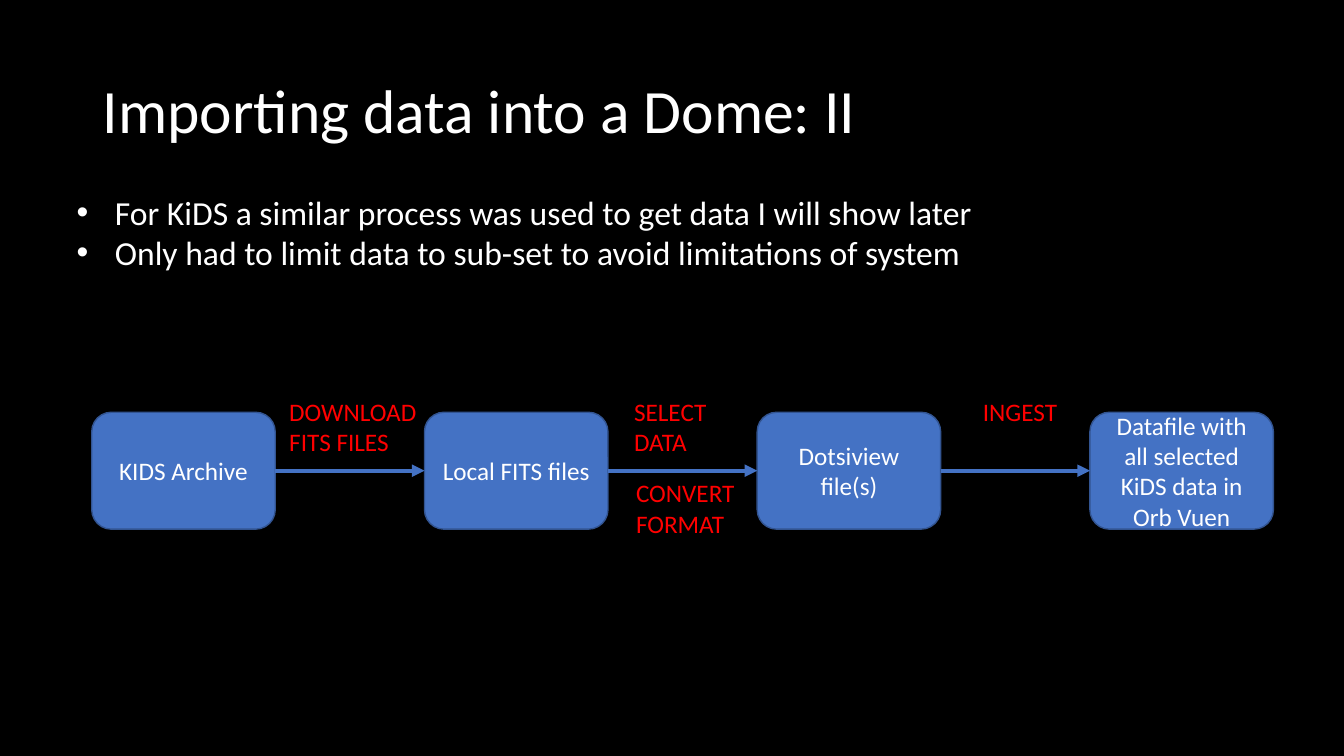
from lxml import etree
from pptx import Presentation
from pptx.dml.color import RGBColor
from pptx.enum.shapes import MSO_CONNECTOR, MSO_SHAPE
from pptx.enum.text import MSO_ANCHOR, MSO_AUTO_SIZE, PP_ALIGN
from pptx.oxml.ns import qn
from pptx.util import Inches, Pt

ROUNDED = MSO_SHAPE.ROUNDED_RECTANGLE
STRAIGHT = MSO_CONNECTOR.STRAIGHT
LEFT, CENTER = PP_ALIGN.LEFT, PP_ALIGN.CENTER
TOP, MIDDLE = MSO_ANCHOR.TOP, MSO_ANCHOR.MIDDLE
NO_AUTOFIT = MSO_AUTO_SIZE.NONE
LEFT_SIDE, RIGHT_SIDE = 1, 3

COLORS = {
    "background": "000000",
    "text": "FFFFFF",
    "box": "4472C4",
    "outline": "325491",
    "label": "FF0000",
}
FONT = "Calibri"
TITLE = "Importing data into a Dome: II"
BULLETS = [
    "For KiDS a similar process was used to get data I will show later",
    "Only had to limit data to sub-set to avoid limitations of system",
]
STAGES = [
    "KIDS Archive",
    "Local FITS files",
    "Dotsiview file(s)",
    "Datafile with all selected KiDS data in Orb Vuen",
]
LABELS = [
    (["DOWNLOAD", "FITS FILES"], 2.77, 3.88, 0.71),
    (["SELECT DATA"], 6.19, 3.88, 0.71),
    (["INGEST"], 9.65, 3.88, 0.4),
    (["CONVERT FORMAT"], 6.21, 4.69, 0.71),
]
STAGE_LEFT, STAGE_TOP, STAGE_STEP = 0.91, 4.09, 3.3
STAGE_WIDTH, STAGE_HEIGHT = 1.82, 1.16
LABEL_WIDTH = 1.48


def color(name):
    return RGBColor.from_string(COLORS[name])


def apply(target, values):
    for name, value in values.items():
        setattr(target, name, value)


class SlideBuilder:
    def __init__(self, slide):
        self.slide = slide
        fill = slide.background.fill
        fill.solid()
        fill.fore_color.rgb = color("background")

    def set_text(self, shape, lines, size, color_name="text", align=LEFT, anchor=TOP, spacing=1.0):
        frame = shape.text_frame
        frame.text = "\n".join(lines)
        apply(frame, {"word_wrap": True, "auto_size": NO_AUTOFIT, "vertical_anchor": anchor})
        for paragraph in frame.paragraphs:
            apply(paragraph, {"alignment": align, "line_spacing": spacing, "space_before": Pt(0)})
            for run in paragraph.runs:
                apply(run.font, {"name": FONT, "size": Pt(size)})
                run.font.color.rgb = color(color_name)

    def place(self, shape, left, top, width, height):
        apply(shape, {
            "left": Inches(left),
            "top": Inches(top),
            "width": Inches(width),
            "height": Inches(height),
        })

    def title(self, text, *position):
        shape = self.slide.shapes.title
        self.place(shape, *position)
        self.set_text(shape, [text], 44, anchor=MIDDLE, spacing=0.9)

    def bullets(self, lines, *position):
        shape = self.slide.placeholders[1]
        self.place(shape, *position)
        self.set_text(shape, lines, 24)
        for paragraph in shape.text_frame.paragraphs:
            properties = paragraph._p.get_or_add_pPr()
            properties.set("marL", str(Inches(0.38)))
            properties.set("indent", str(Inches(-0.38)))
            etree.SubElement(properties, qn("a:buFont"), typeface="Arial")
            etree.SubElement(properties, qn("a:buChar"), char="•")

    def box(self, text, *position):
        shape = self.slide.shapes.add_shape(ROUNDED, *map(Inches, position))
        shape.shadow.inherit = False
        shape.fill.solid()
        shape.fill.fore_color.rgb = color("box")
        shape.line.color.rgb = color("outline")
        shape.line.width = Pt(1)
        self.set_text(shape, [text], 18, align=CENTER, anchor=MIDDLE)
        return shape

    def arrow(self, start, end):
        connector = self.slide.shapes.add_connector(STRAIGHT, 0, 0, 0, 0)
        connector.begin_connect(start, RIGHT_SIDE)
        connector.end_connect(end, LEFT_SIDE)
        connector.line.color.rgb = color("box")
        connector.line.width = Pt(3)
        properties = connector._element.spPr
        etree.SubElement(properties.find(qn("a:ln")), qn("a:tailEnd"), type="triangle")
        etree.SubElement(properties, qn("a:effectLst"))

    def label(self, lines, *position):
        shape = self.slide.shapes.add_textbox(*map(Inches, position))
        self.set_text(shape, lines, 18, color_name="label")


def main():
    presentation = Presentation()
    apply(presentation, {"slide_width": Inches(13.33), "slide_height": Inches(7.5)})
    builder = SlideBuilder(presentation.slides.add_slide(presentation.slide_layouts[1]))
    builder.title(TITLE, 0.92, 0.4, 12.03, 1.45)
    builder.bullets(BULLETS, 0.66, 1.85, 10.75, 2.66)
    boxes = [
        builder.box(text, STAGE_LEFT + index * STAGE_STEP, STAGE_TOP, STAGE_WIDTH, STAGE_HEIGHT)
        for index, text in enumerate(STAGES)
    ]
    for start, end in zip(boxes, boxes[1:]):
        builder.arrow(start, end)
    for lines, left, top, height in LABELS:
        builder.label(lines, left, top, LABEL_WIDTH, height)
    presentation.save("out.pptx")


if __name__ == "__main__":
    main()
